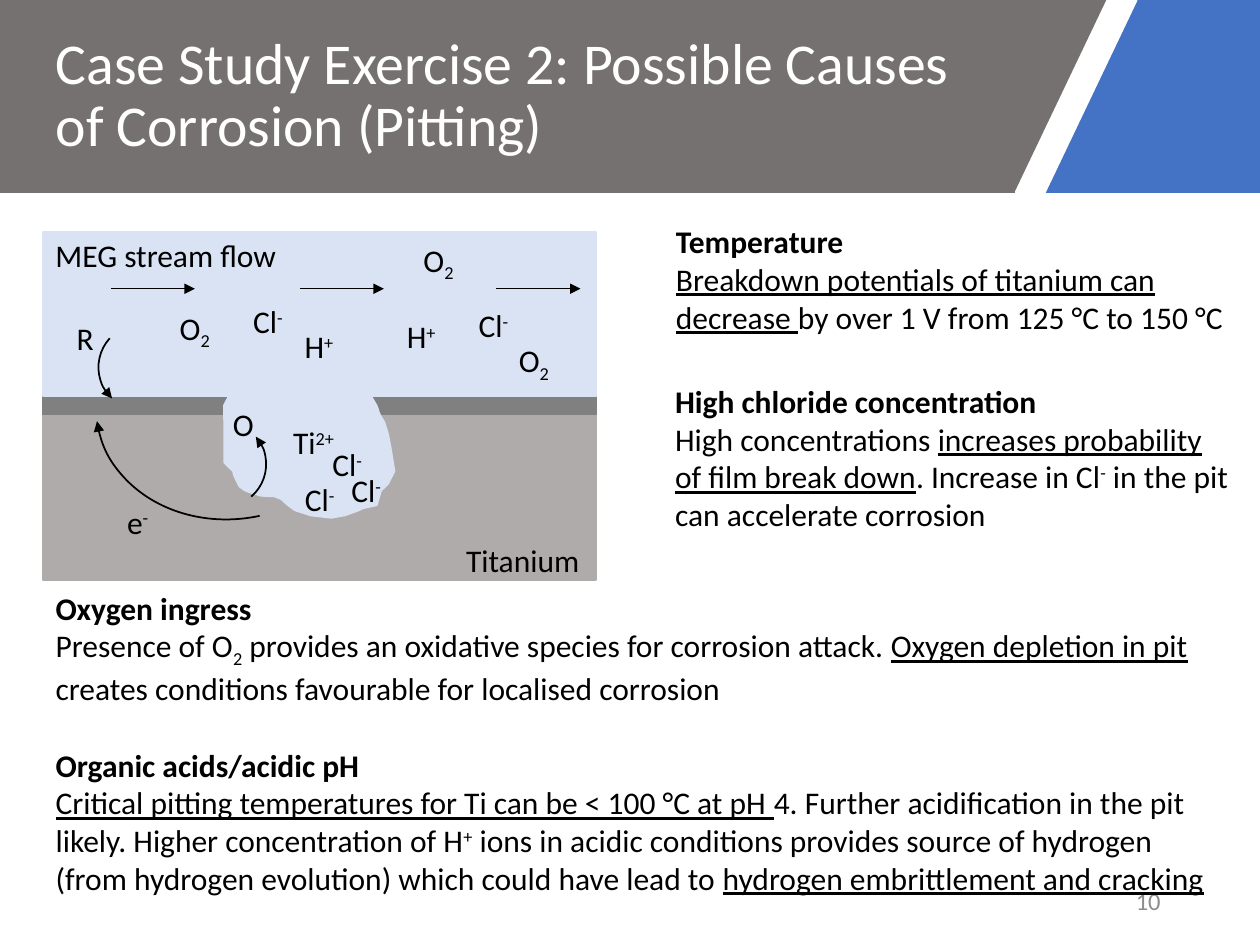
from dataclasses import dataclass

from lxml.etree import SubElement
from pptx import Presentation
from pptx.dml.color import RGBColor
from pptx.enum.shapes import MSO_CONNECTOR, MSO_SHAPE
from pptx.enum.text import MSO_ANCHOR, PP_ALIGN
from pptx.oxml.ns import qn
from pptx.util import Pt

FONT = "Calibri"
BLACK, WHITE, GREY, BLUE = "000000", "FFFFFF", "767171", "4472C4"
STREAM, FILM, METAL = "DAE3F3", "808080", "AFABAB"
BODY = 18
HEADER_HEIGHT = 110.2
SUB, SUPER = -25000, 30000


@dataclass
class Span:
    text: str
    bold: bool = False
    underline: bool = False
    baseline: int = 0


@dataclass
class Label:
    left: float
    top: float
    width: float
    text: str
    script: str = ""
    baseline: int = SUPER


@dataclass
class Arc:
    left: float
    top: float
    width: float
    height: float
    rotation: float
    start: float = 270
    end_name: str = "a:headEnd"


@dataclass
class TextBlock:
    left: float
    top: float
    width: float
    height: float
    paras: list[list[Span]]


def colour(value: str) -> RGBColor:
    return RGBColor.from_string(value)


def add_span(para, span: Span, size: float = BODY, fill: str = BLACK) -> None:
    run = para.add_run()
    run.text = span.text
    font = run.font
    font.name, font.size = FONT, Pt(size)
    font.bold, font.underline = span.bold, span.underline
    font.color.rgb = colour(fill)
    if span.baseline:
        font._element.set("baseline", str(span.baseline))


def add_box(page, left, top, width, height, wrap=True):
    box = page.shapes.add_textbox(Pt(left), Pt(top), Pt(width), Pt(height))
    box.text_frame.word_wrap = wrap
    return box


def paint(shape, fill: str, outlined: bool = False) -> None:
    shape.shadow.inherit = False
    shape.fill.solid()
    shape.fill.fore_color.rgb = colour(fill)
    if outlined:
        shape.line.color.rgb = colour(fill)
        shape.line.width = Pt(1)
    else:
        shape.line.fill.background()


def add_block(page, kind, left, top, width, height, fill, outlined=False):
    shape = page.shapes.add_shape(kind, Pt(left), Pt(top), Pt(width), Pt(height))
    paint(shape, fill, outlined)
    return shape


def add_arrowhead(shape, end_name: str, width: float) -> None:
    shape.line.color.rgb = colour(BLACK)
    shape.line.width = Pt(width)
    SubElement(shape.line._get_or_add_ln(), qn(end_name), type="triangle")


def add_arc(page, arc: Arc) -> None:
    shape = page.shapes.add_shape(
        MSO_SHAPE.ARC, Pt(arc.left), Pt(arc.top), Pt(arc.width), Pt(arc.height))
    shape.adjustments[0] = arc.start * 0.6
    shape.rotation = arc.rotation
    shape.shadow.inherit = False
    shape.fill.background()
    add_arrowhead(shape, arc.end_name, 1)


def add_flow_arrow(page, left: float) -> None:
    line = page.shapes.add_connector(
        MSO_CONNECTOR.STRAIGHT, Pt(left), Pt(165), Pt(left + 48), Pt(165))
    add_arrowhead(line, "a:tailEnd", 0.5)
    SubElement(line.element.spPr, qn("a:effectLst"))


def add_label(page, label: Label) -> None:
    box = add_box(page, label.left, label.top, label.width, 29, wrap=False)
    para = box.text_frame.paragraphs[0]
    add_span(para, Span(label.text))
    if label.script:
        add_span(para, Span(label.script, baseline=label.baseline))


def add_text_block(page, block: TextBlock) -> None:
    frame = add_box(page, block.left, block.top, block.width, block.height).text_frame
    for index, spans in enumerate(block.paras):
        para = frame.paragraphs[0] if index == 0 else frame.add_paragraph()
        if index and spans[0].bold:
            para.space_before = Pt(22)
        for span in spans:
            add_span(para, span)


def curve_points(start, curves, steps=2):
    """Points along a chain of cubic curves."""
    points = [start]
    for x1, y1, x2, y2, x3, y3 in curves:
        x0, y0 = points[-1]
        for step in range(1, steps + 1):
            t = step / steps
            a, b, c, d = (1 - t) ** 3, 3 * t * (1 - t) ** 2, 3 * t * t * (1 - t), t ** 3
            points.append((a * x0 + b * x1 + c * x2 + d * x3,
                           a * y0 + b * y1 + c * y2 + d * y3))
    return points


# Pit outline on a grid of 0.72 pt: two control points and an end point per curve
PIT_START = (185, 308)
PIT_CURVES = [
    (175, 315, 178, 323, 178, 351), (178, 371, 176, 367, 185, 374),
    (185, 376, 186, 378, 187, 380), (188, 382, 189, 384, 190, 386),
    (192, 388, 194, 389, 196, 390), (202, 394, 212, 394, 218, 394),
    (219, 395, 221, 395, 223, 396), (227, 399, 230, 403, 234, 405),
    (251, 411, 241, 408, 263, 411), (267, 410, 270, 410, 274, 409),
    (278, 408, 281, 406, 285, 405), (287, 404, 288, 403, 290, 403),
    (293, 402, 296, 402, 299, 401), (304, 386, 300, 391, 308, 384),
    (316, 372, 313, 379, 310, 355), (310, 352, 306, 336, 305, 335),
    (304, 333, 302, 331, 301, 328), (300, 326, 300, 324, 299, 322),
    (298, 319, 293, 312, 290, 310), (287, 308, 279, 306, 279, 306),
    (274, 307, 255, 310, 250, 310), (248, 310, 240, 307, 238, 306),
    (190, 308, 195, 300, 185, 308),
]
ARCS = [
    Arc(103.7, 241.2, 48.2, 49, 48.8),
    Arc(56.4, 185, 48.2, 49, 222.3),
    Arc(54.7, 163.4, 155.5, 133.2, 172.1, 264.08, "a:tailEnd"),
]
LABELS = [
    Label(24.6, 131.4, 146.2, "MEG stream flow"),
    *[Label(left, top, 32.4, "Cl", "-") for left, top in
      [(182.9, 251), (167.2, 270.7), (193.7, 265.7), (137.5, 169.2), (266.4, 171.4)]],
    *[Label(left, top, 31.7, "H", "+") for left, top in [(225.4, 177.8), (167, 183.3)]],
    *[Label(left, top, 32.4, "O", "2", SUB) for left, top in
      [(95.6, 172.8), (234.9, 133.9), (289.4, 191.5)]],
    Label(65.5, 283.7, 27.4, "e", "-"),
    Label(126, 227.9, 26.6, "O"),
    Label(36.7, 178.6, 24.5, "R"),
    Label(160.4, 238.3, 39.6, "Ti", "2+"),
    Label(259.2, 305.7, 79.9, "Titanium"),
]
TEXT_BLOCKS = [
    TextBlock(379.2, 123.3, 337, 72.7, [
        [Span("Temperature", bold=True)],
        [Span("Breakdown potentials of titanium can decrease ", underline=True),
         Span("by over 1 V from 125 °C to 150 °C")],
    ]),
    TextBlock(378.7, 214.6, 332, 94.3, [
        [Span("High chloride concentration", bold=True)],
        [Span("High concentrations "),
         Span("increases probability of film break down", underline=True),
         Span(". Increase in Cl"), Span("-", baseline=SUPER),
         Span(" in the pit can accelerate corrosion")],
    ]),
    TextBlock(24.7, 332.8, 683, 181.4, [
        [Span("Oxygen ingress", bold=True)],
        [Span("Presence of O"), Span("2", baseline=SUB),
         Span(" provides an oxidative species for corrosion attack. "),
         Span("Oxygen depletion in pit ", underline=True),
         Span("creates conditions favourable for localised corrosion")],
        [Span("Organic acids/acidic pH", bold=True)],
        [Span("Critical pitting temperatures for Ti can be < 100 °C at pH ", underline=True),
         Span("4. Further acidification in the pit likely. Higher concentration of H"),
         Span("+", baseline=SUPER),
         Span(" ions in acidic conditions provides source of hydrogen (from hydrogen "
              "evolution) which could have lead to "),
         Span("hydrogen embrittlement and cracking", underline=True)],
    ]),
]


def add_header(page) -> None:
    # Slanted grey and blue bands
    for left, width, fill in [(0, 580, GREY), (650, 70, BLUE)]:
        add_block(page, MSO_SHAPE.RECTANGLE, left, 0, width, HEADER_HEIGHT, fill)
    for left, fill, turn in [(579.6, GREY, 0), (597.6, BLUE, 180)]:
        wedge = add_block(page, MSO_SHAPE.RIGHT_TRIANGLE, left, 0, 52.6, HEADER_HEIGHT, fill)
        wedge.rotation = turn
        wedge.element.spPr.xfrm.set("flipV", "1")

    # Title, brought in front of the bands
    title = page.shapes.title
    title.left, title.top, title.width, title.height = Pt(24.6), Pt(10.8), Pt(527.8), Pt(89.3)
    title.element.getparent().append(title.element)
    title.text_frame.word_wrap = True
    title.text_frame.vertical_anchor = MSO_ANCHOR.MIDDLE
    para = title.text_frame.paragraphs[0]
    para.alignment, para.line_spacing = PP_ALIGN.LEFT, 0.9
    add_span(para, Span("Case Study Exercise 2: Possible Causes of Corrosion (Pitting)"), 33, WHITE)


def add_diagram(page) -> None:
    # Metal, oxide film and stream layers
    for top, height, fill in [(236.2, 95.3, METAL), (227, 9.9, FILM), (132.5, 93.8, STREAM)]:
        add_block(page, MSO_SHAPE.RECTANGLE, 24.5, top, 316.1, height, fill, outlined=True)
    for left in (63.4, 171.4, 283.7):
        add_flow_arrow(page, left)

    # Pit, drawn in tenths of its grid
    first, *rest = [(x * 10, y * 10) for x, y in curve_points(PIT_START, PIT_CURVES)]
    outline = page.shapes.build_freeform(*first, scale=Pt(0.72) / 10)
    outline.add_line_segments(rest, close=True)
    paint(outline.convert_to_shape(), STREAM, outlined=True)

    for arc in ARCS:
        add_arc(page, arc)
    for label in LABELS:
        add_label(page, label)


def main() -> None:
    deck = Presentation()
    deck.slide_width, deck.slide_height = Pt(720), Pt(540)
    page = deck.slides.add_slide(deck.slide_layouts[5])
    add_header(page)

    # Page number
    number = add_box(page, 508.3, 500.4, 162, 28.8)
    number.text_frame.vertical_anchor = MSO_ANCHOR.MIDDLE
    para = number.text_frame.paragraphs[0]
    para.alignment = PP_ALIGN.RIGHT
    add_span(para, Span("10"), 14, "8C8C8C")

    add_diagram(page)
    for block in TEXT_BLOCKS:
        add_text_block(page, block)
    deck.save("out.pptx")


if __name__ == "__main__":
    main()
